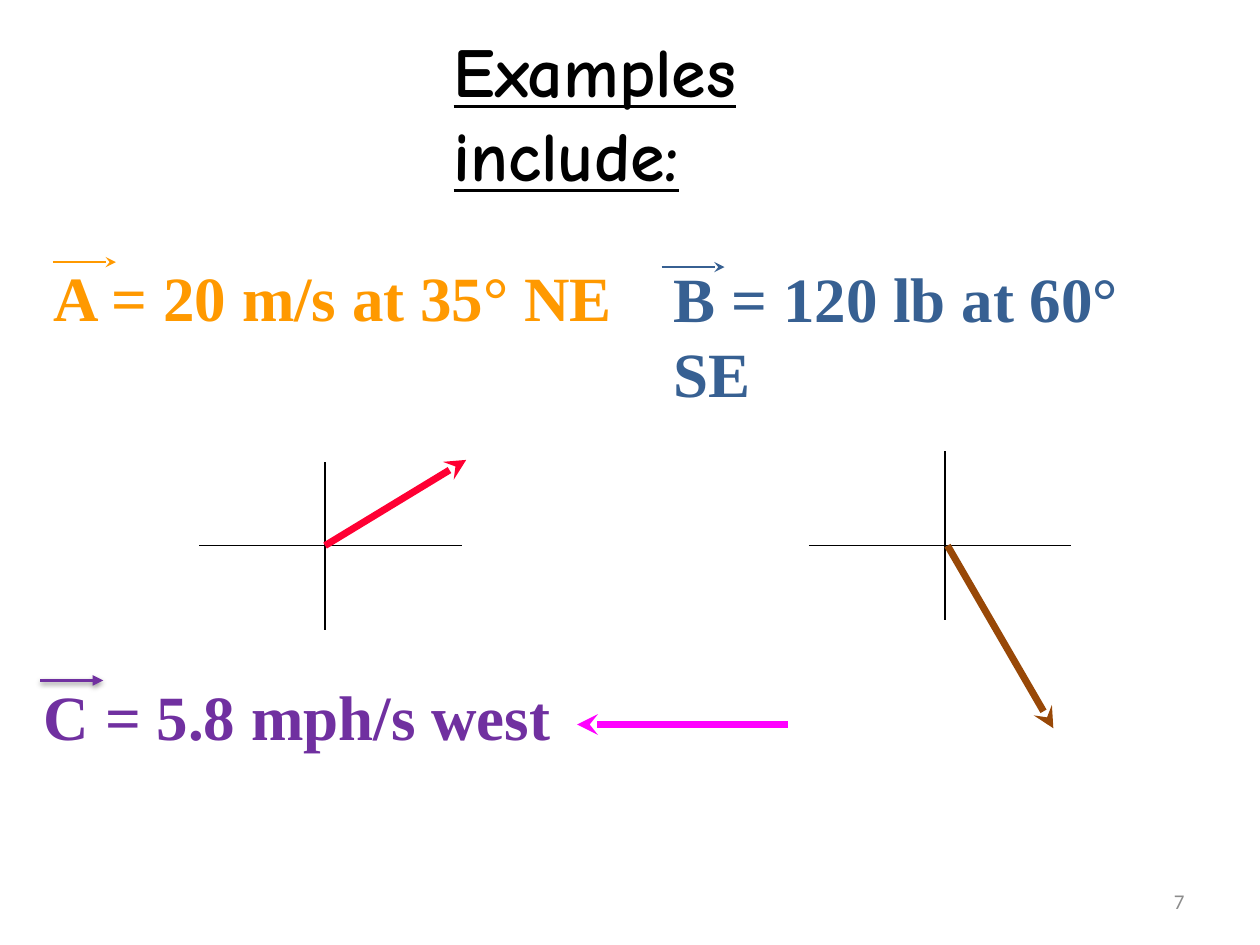
from pptx import Presentation
from pptx import util as u
from pptx.dml.color import RGBColor
from pptx.enum import shapes, text
from pptx.oxml.ns import qn
from lxml import etree

HUES = {
    "ink": "000000", "a": "FF9900", "b": "376092", "c": "7030A0",
    "red": "FF0033", "brown": "984807", "pink": "FF00FF", "page": "8C8C8C",
}


def sub(node, tag, **attrs):
    return etree.SubElement(node, qn(tag), attrs)


def color(hue):
    return RGBColor.from_string(HUES[hue])


def shade(effects):
    """Soft shadow straight below a line."""
    drop = sub(effects, "a:outerShdw", blurRad=str(u.Pt(3.1)), dist=str(u.Pt(1.6)),
               dir="5400000", rotWithShape="0")
    sub(sub(drop, "a:srgbClr", val=HUES["ink"]), "a:alpha", val="38000")


def line(slide, start, end, hue, width=1, head=None, shadow=False):
    ends = [u.Inches(n) for n in (*start, *end)]
    wire = slide.shapes.add_connector(shapes.MSO_CONNECTOR.STRAIGHT, *ends)
    wire.line.color.rgb = color(hue)
    wire.line.width = u.Pt(width)
    if head:
        sub(wire.line._get_or_add_ln(), "a:tailEnd", type=head)
    effects = sub(wire._element.spPr, "a:effectLst")
    if shadow:
        shade(effects)


def write(shape, words, font, size, hue, bold=True, align=text.PP_ALIGN.LEFT):
    frame = shape.text_frame
    frame.word_wrap = True
    frame.vertical_anchor = text.MSO_ANCHOR.TOP
    frame.auto_size = text.MSO_AUTO_SIZE.SHAPE_TO_FIT_TEXT
    para = frame.paragraphs[0]
    para.alignment = align
    run = para.add_run()
    run.text = words
    run.font.name = font
    run.font.size = u.Pt(size)
    run.font.bold = bold
    run.font.color.rgb = color(hue)
    return run


def title(slide, box, words):
    shape = slide.shapes.title
    shape.left, shape.top, shape.width, shape.height = map(u.Inches, box)
    write(shape, words, "Comic Neue", 40, "ink").font.underline = True


def label(slide, box, words, hue, shift, width=1, head="stealth", shadow=False):
    """Vector formula with an arrow over its first letter; shift places the arrow."""
    shape = slide.shapes.add_textbox(*map(u.Inches, box))
    write(shape, words, "Times New Roman", 36, hue)
    x, y = box[0] + shift[0], box[1] + shift[1]
    line(slide, (x, y), (x + 0.5, y), hue, width, head, shadow)


def plot(slide, box, origin, start, tip, hue):
    """Axes filling box, crossing at origin, with a vector measured from there."""
    left, top, wide, high = box
    x, y = left + origin[0], top + origin[1]
    line(slide, (left, y), (left + wide, y), "ink")
    line(slide, (x, top), (x, top + high), "ink")
    line(slide, (x + start, y), (x + tip[0], y + tip[1]), hue, 4, "stealth")


def number(slide, box, words):
    shape = slide.shapes.add_textbox(*map(u.Inches, box))
    write(shape, words, "Calibri", 12, "page", False, text.PP_ALIGN.RIGHT)
    shape.text_frame.auto_size = text.MSO_AUTO_SIZE.NONE
    shape.text_frame.vertical_anchor = text.MSO_ANCHOR.MIDDLE


def main():
    deck = Presentation()
    deck.slide_width, deck.slide_height = u.Inches(10), u.Inches(7.5)
    slide = deck.slides.add_slide(deck.slide_layouts[5])
    title(slide, (3.5, 0.17, 3.15, 0.77), "Examples include:")
    label(slide, (0.33, 2, 4.66, 0.7), "A = 20 m/s at 35° NE", "a", (0.09, 0.08))
    plot(slide, (1.58, 3.67, 2.09, 1.33), (1, 0.66), 0, (1.12, -0.68), "red")
    label(slide, (5.25, 2.01, 4.46, 0.7), "B = 120 lb at 60° SE", "b", (0, 0.11))
    plot(slide, (6.42, 3.58, 2.08, 1.34), (1.08, 0.75), 0.02, (0.86, 1.45), "brown")
    label(slide, (0.25, 5.33, 4.22, 0.7), "C = 5.8 mph/s west", "c", (0.07, 0.07),
          2, "triangle", True)
    line(slide, (6.25, 5.75), (4.58, 5.75), "pink", 4, "stealth")
    number(slide, (7.17, 6.95, 2.33, 0.4), "7")
    deck.save("out.pptx")


if __name__ == "__main__":
    main()
